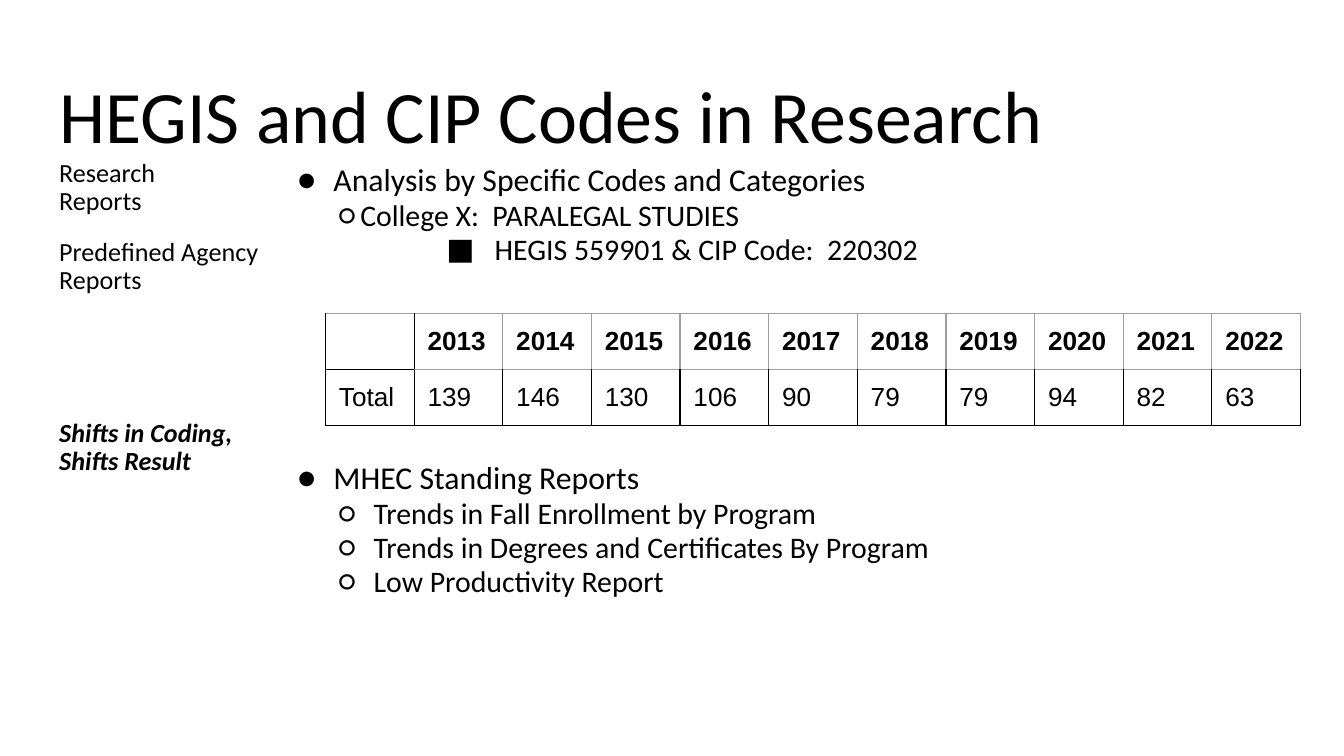
from lxml.etree import SubElement
from pptx import Presentation
from pptx.dml.color import RGBColor
from pptx.enum.text import MSO_ANCHOR, MSO_AUTO_SIZE, PP_ALIGN
from pptx.oxml.ns import qn
from pptx.util import Pt

BLACK = RGBColor(0x00, 0x00, 0x00)
GREY = RGBColor(0x9E, 0x9E, 0x9E)
INSET = 7.2

# Content: each line is text, font format, paragraph layout
TITLE = [("HEGIS and CIP Codes in Research", {"size": Pt(39.6)}, {})]

SMALL = {"size": Pt(14)}
SIDE = [
    ("Research", SMALL, {}),
    ("Reports", SMALL, {}),
    ("Predefined Agency Reports", SMALL, {"before": 12}),
    ("Shifts in Coding, Shifts Result",
     {**SMALL, "bold": True, "italic": True}, {"before": 66.5}),
]

HEAD, ITEM = {"size": Pt(17)}, {"size": Pt(16)}
TOP = {"mark": "●", "left": 21.6, "hang": 19.4}
SUB = {"mark": "○", "left": 43.2, "hang": 18.7, "level": 1}
MAIN = [
    ("Analysis by Specific Codes and Categories", HEAD, TOP),
    ("College X:  PARALEGAL STUDIES", ITEM,
     {**SUB, "left": 36, "hang": 11.5}),
    ("HEGIS 559901 & CIP Code:  220302", ITEM,
     {"mark": "■", "left": 108, "hang": 25.9, "level": 2}),
    ("MHEC Standing Reports", HEAD, {**TOP, "before": 104}),
    ("Trends in Fall Enrollment by Program", ITEM, SUB),
    ("Trends in Degrees and Certificates By Program", ITEM, SUB),
    ("Low Productivity Report", ITEM, SUB),
]

YEARS = range(2013, 2023)
TOTALS = [139, 146, 130, 106, 90, 79, 79, 94, 82, 63]
ROWS = [["", *YEARS], ["Total", *TOTALS]]


def style(font, form, face="Calibri"):
    for key, val in {"name": face, **form}.items():
        setattr(font, key, val)
    font.color.rgb = BLACK


def bullet(para, mark, left, hang):
    props = para._p.get_or_add_pPr()
    props.set("marL", str(Pt(left)))
    props.set("indent", str(-Pt(hang)))
    if not mark:
        SubElement(props, qn("a:buNone"))
        return
    tint = SubElement(props, qn("a:buClr"))
    SubElement(tint, qn("a:srgbClr"), val=str(BLACK))
    SubElement(props, qn("a:buFont"), typeface="Calibri")
    SubElement(props, qn("a:buChar"), char=mark)


def fill(holder, place, lines, space, right=INSET):
    for key, val in zip(("left", "top", "width", "height"), place):
        setattr(holder, key, Pt(val))
    frame = holder.text_frame
    form = {
        "word_wrap": True, "auto_size": MSO_AUTO_SIZE.NONE,
        "vertical_anchor": MSO_ANCHOR.TOP,
        "margin_left": Pt(INSET), "margin_right": Pt(right),
        "margin_top": Pt(INSET), "margin_bottom": Pt(INSET),
    }
    for key, val in form.items():
        setattr(frame, key, val)
    for num, (text, font, lay) in enumerate(lines):
        para = frame.add_paragraph() if num else frame.paragraphs[0]
        form = {
            "level": lay.get("level", 0), "alignment": PP_ALIGN.LEFT,
            "line_spacing": space, "space_before": Pt(lay.get("before", 0)),
            "space_after": Pt(0),
        }
        for key, val in form.items():
            setattr(para, key, val)
        bullet(para, lay.get("mark"), lay.get("left", 0), lay.get("hang", 0))
        run = para.add_run()
        run.text = text
        style(run.font, font)


def border(cell, tints):
    props = cell._tc.get_or_add_tcPr()
    for num, (side, tint) in enumerate(zip("LRTB", tints)):
        line = props.makeelement(qn(f"a:ln{side}"), {"w": str(Pt(0.75))})
        solid = SubElement(line, qn("a:solidFill"))
        SubElement(solid, qn("a:srgbClr"), val=str(tint))
        props.insert(num, line)


def edges(row, col):
    """Tints for left, right, top and bottom: grey around the years."""
    if row == 0 and col == 0:
        return BLACK, BLACK, GREY, BLACK
    if row == 0:
        return BLACK if col == 1 else GREY, GREY, GREY, GREY
    return BLACK, BLACK, GREY if col else BLACK, BLACK


def grid(slide):
    wide, high = 47.5, 30
    cols = len(ROWS[0])
    table = slide.shapes.add_table(
        len(ROWS), cols, Pt(174.4), Pt(167.8),
        Pt(wide * cols), Pt(high * len(ROWS))).table
    table.first_row = table.horz_banding = False
    for col in table.columns:
        col.width = Pt(wide)
    for row, vals in enumerate(ROWS):
        table.rows[row].height = Pt(high)
        for col, val in enumerate(vals):
            cell = table.cell(row, col)
            for side in ("left", "right", "top", "bottom"):
                setattr(cell, f"margin_{side}", Pt(INSET))
            cell.fill.background()
            border(cell, edges(row, col))
            para = cell.text_frame.paragraphs[0]
            para.text = str(val)
            style(para.font, {**SMALL, "bold": row == 0}, "Arial")
            for run in para.runs:
                style(run.font, {**SMALL, "bold": row == 0}, "Arial")


def main():
    deck = Presentation()
    deck.slide_width, deck.slide_height = Pt(720), Pt(405)
    slide = deck.slides.add_slide(deck.slide_layouts.get_by_name("Two Content"))
    title, side, body = list(slide.placeholders)[:3]

    # Title, side notes and main list
    fill(title, (24.5, 35.3, 671, 45.4), TITLE, 0.9)
    fill(side, (24.5, 78.5, 123.8, 269.3), SIDE, 0.9)
    fill(body, (149.8, 79.9, 572.4, 316.8), MAIN, 0.95, right=0)

    # Totals by year
    grid(slide)
    deck.save("out.pptx")


if __name__ == "__main__":
    main()
